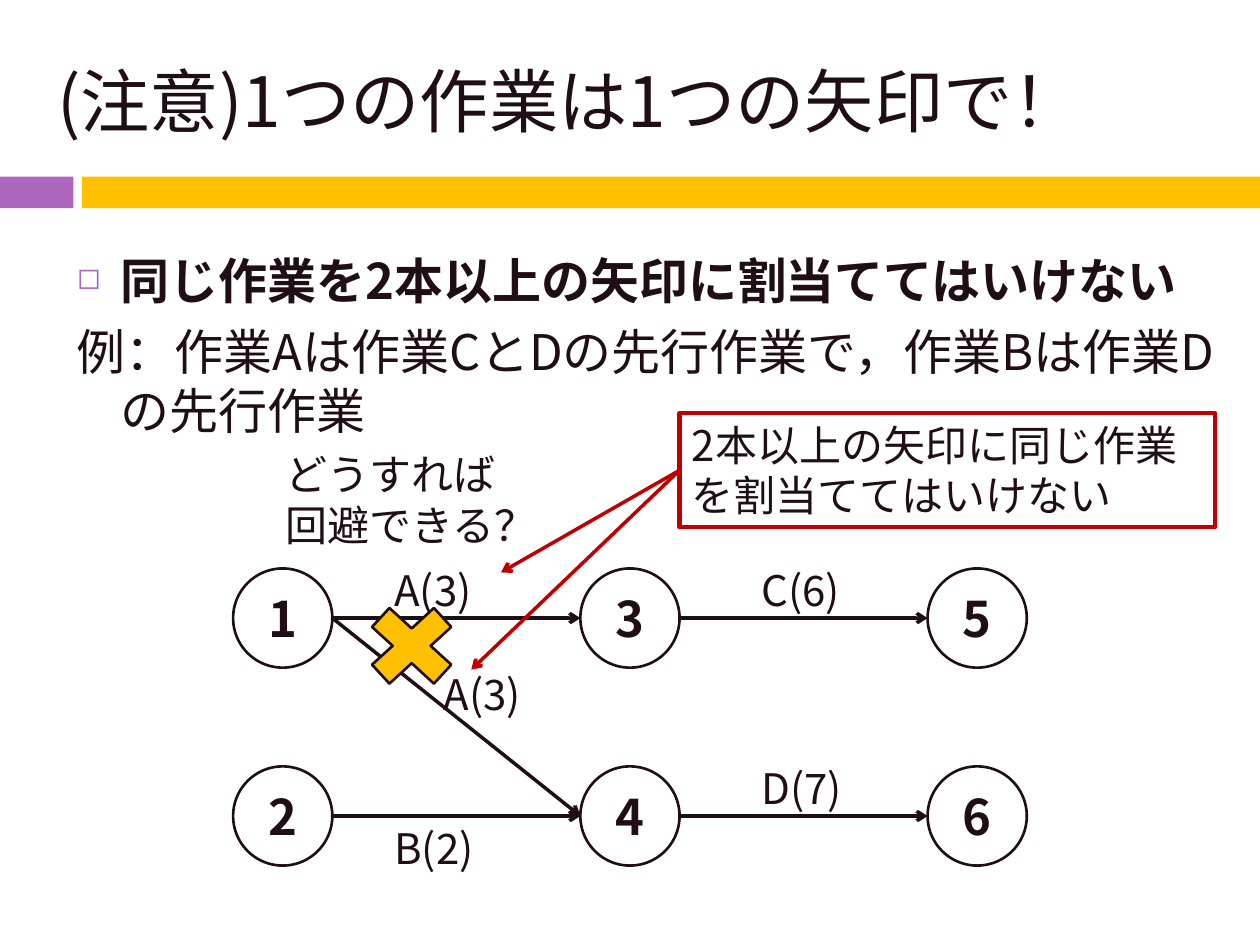
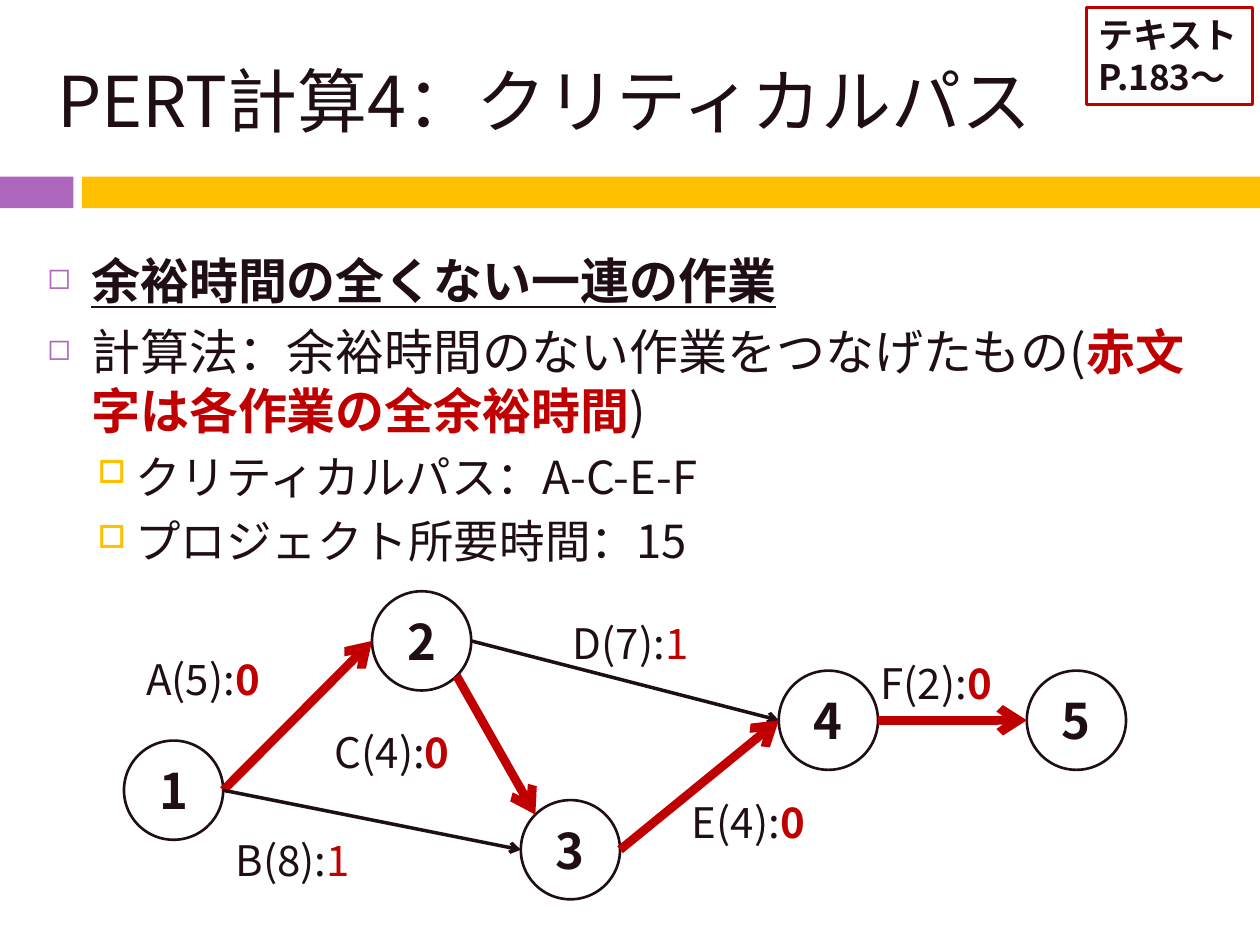
"""Build two slides on arrow diagrams and the critical path."""
from math import sqrt

from lxml import etree
from pptx import Presentation
from pptx.dml.color import RGBColor
from pptx.enum.shapes import MSO_CONNECTOR, MSO_SHAPE
from pptx.enum.text import MSO_ANCHOR, MSO_AUTO_SIZE, PP_ALIGN
from pptx.oxml.ns import qn
from pptx.util import Cm, Pt

STRAIGHT = MSO_CONNECTOR.STRAIGHT
RECT, OVAL, CROSS = MSO_SHAPE.RECTANGLE, MSO_SHAPE.OVAL, MSO_SHAPE.MATH_MULTIPLY
MIDDLE, TOP = MSO_ANCHOR.MIDDLE, MSO_ANCHOR.TOP
LEFT, CENTER = PP_ALIGN.LEFT, PP_ALIGN.CENTER
NO_FIT = MSO_AUTO_SIZE.NONE

COLORS = {"ink": "200E17", "purple": "AC66BB", "amber": "FFC000", "red": "C00000"}
FONT = "Noto Sans CJK JP"
WIDTH, HEIGHT = 25.4, 19.05
RADIUS = 1
BULLETS = {
    0: dict(char="◻", color="purple", percent=60, margin=0.89, hang=0.89, before=7, size=28),
    1: dict(char="□", color="amber", percent=70, margin=1.78, hang=0.76, before=5.5, size=26),
}


def rgb(name):
    return RGBColor.from_string(COLORS[name])


class Deck:
    """Hold the shared style and the current slide."""

    def __init__(self):
        self.prs = Presentation()
        self.prs.slide_width, self.prs.slide_height = Cm(WIDTH), Cm(HEIGHT)
        self.s = None

    def slide(self, title, size=40):
        self.s = self.prs.slides.add_slide(self.prs.slide_layouts[5])
        self.shape(RECT, 0, 3.56, 1.48, 0.64, "purple")
        self.shape(RECT, 1.65, 3.56, WIDTH - 1.65, 0.64, "amber")
        sp = self.s.shapes.title
        sp.left, sp.top, sp.width, sp.height = Cm(0.9), Cm(0.64), Cm(23.6), Cm(2.74)
        tf = sp.text_frame
        tf.auto_size, tf.vertical_anchor = NO_FIT, MIDDLE
        self.runs(tf.paragraphs[0], [(title, {})], size)

    def runs(self, p, parts, size, align=LEFT):
        p.alignment = align
        for text, look in parts:
            r = p.add_run()
            r.text = text
            r.font.name, r.font.size = FONT, Pt(size)
            r.font.bold = look.get("bold", False)
            r.font.underline = look.get("underline", False)
            r.font.color.rgb = rgb(look.get("color", "ink"))
            etree.SubElement(r.font._element, qn("a:ea"), typeface=FONT)

    def shape(self, kind, x, y, w, h, fill=None, line=None, weight=1.5):
        sp = self.s.shapes.add_shape(kind, Cm(x), Cm(y), Cm(w), Cm(h))
        sp.shadow.inherit = False
        if fill:
            sp.fill.solid()
            sp.fill.fore_color.rgb = rgb(fill)
        else:
            sp.fill.background()
        if line:
            sp.line.color.rgb, sp.line.width = rgb(line), Pt(weight)
        else:
            sp.line.fill.background()
        return sp

    def text(self, x, y, w, h, lines, size=24, border=None, wrap=True):
        sp = self.s.shapes.add_textbox(Cm(x), Cm(y), Cm(w), Cm(h))
        if border:
            sp.line.color.rgb, sp.line.width = rgb("red"), Pt(border)
        tf = sp.text_frame
        tf.word_wrap, tf.vertical_anchor = wrap, TOP
        for i, parts in enumerate(lines):
            p = tf.add_paragraph() if i else tf.paragraphs[0]
            self.runs(p, parts, size)

    def body(self, x, w, items):
        sp = self.s.shapes.add_textbox(Cm(x), Cm(4.93), Cm(w), Cm(12))
        tf = sp.text_frame
        tf.word_wrap = True
        for i, (level, bulleted, parts) in enumerate(items):
            p = tf.add_paragraph() if i else tf.paragraphs[0]
            style = BULLETS[level]
            p.level, p.space_before = level, Pt(style["before"])
            self.runs(p, parts, style["size"])
            pPr = p._p.get_or_add_pPr()
            pPr.set("marL", str(Cm(style["margin"])))
            pPr.set("indent", str(-Cm(style["hang"])))
            if bulleted:
                clr = etree.SubElement(pPr, qn("a:buClr"))
                etree.SubElement(clr, qn("a:srgbClr"), val=COLORS[style["color"]])
                etree.SubElement(pPr, qn("a:buSzPct"), val=str(style["percent"] * 1000))
                etree.SubElement(pPr, qn("a:buChar"), char=style["char"])

    def node(self, name, x, y):
        sp = self.shape(OVAL, x, y, 2 * RADIUS, 2 * RADIUS, line="ink")
        tf = sp.text_frame
        tf.vertical_anchor = MIDDLE
        self.runs(tf.paragraphs[0], [(name, {"bold": True})], 28, CENTER)

    def arrow(self, x1, y1, x2, y2, color="ink", weight=2):
        c = self.s.shapes.add_connector(STRAIGHT, Cm(x1), Cm(y1), Cm(x2), Cm(y2))
        c.line.color.rgb, c.line.width = rgb(color), Pt(weight)
        spPr = c.element.spPr
        etree.SubElement(spPr.find(qn("a:ln")), qn("a:tailEnd"), type="arrow")
        etree.SubElement(spPr, qn("a:effectLst"))

    def link(self, start, end, critical=False, diagonal=False):
        dx, dy = (RADIUS / sqrt(2),) * 2 if diagonal else (RADIUS, 0)
        (x1, y1), (x2, y2) = [(x + RADIUS, y + RADIUS) for x, y in (start, end)]
        color, weight = ("red", 5) if critical else ("ink", 2)
        self.arrow(x1 + dx, y1 + dy, x2 - dx, y2 - dy, color, weight)


def one_arrow_per_task(d):
    d.slide("(注意)1つの作業は1つの矢印で！", 39.6)
    d.body(1.3, 23.6, [
        (0, True, [("同じ作業を2本以上の矢印に割当ててはいけない", {"bold": True})]),
        (0, False, [("例：作業Aは作業CとDの先行作業で，作業Bは作業Dの先行作業", {})]),
    ])
    nodes = {str(2 * col + row + 1): (4.7 + 7 * col, 11.46 + 3.99 * row)
             for col in range(3) for row in range(2)}
    for name, at in nodes.items():
        d.node(name, *at)
    for start, end in ("13", "14", "24", "35", "46"):
        d.link(nodes[start], nodes[end])
    for text, x, y in (("A(3)", 7.7, 11.25), ("A(3)", 8.7, 13.35), ("B(2)", 7.7, 16.45),
                       ("C(6)", 15.1, 11.25), ("D(7)", 15.1, 15.25)):
        d.text(x, y, 2.6, 1.27, [[(text, {})]])
    d.text(13.7, 8.33, 10.8, 2.3, [[("2本以上の矢印に同じ作業を割当ててはいけない", {})]], border=2.5)
    for x, y in ((10.1, 11.54), (9.5, 13.5)):
        d.arrow(13.7, 9.48, x, y, "red")
    d.text(5.5, 8.92, 5.7, 2.3, [[("どうすれば　回避できる？", {})]])
    d.shape(CROSS, 7.1, 11.92, 2.4, 2.2, "amber", "ink")


def critical_path(d):
    d.slide("PERT計算4：クリティカルパス")
    d.body(0.7, 23.8, [
        (0, True, [("余裕時間の全くない一連の作業", {"bold": True, "underline": True})]),
        (0, True, [("計算法：余裕時間のない作業をつなげたもの(", {}),
                   ("赤文字は各作業の全余裕時間", {"bold": True, "color": "red"}),
                   (")", {})]),
        (1, True, [("クリティカルパス：A-C-E-F", {})]),
        (1, True, [("プロジェクト所要時間：15", {})]),
    ])
    nodes = {"1": (2.5, 14.93), "2": (7.5, 11.92), "3": (10.5, 16.13),
             "4": (15.7, 13.52), "5": (20.7, 13.52)}
    for name, at in nodes.items():
        d.node(name, *at)
    tasks = (("A(5):", 0, "12", 2.7, 13.05), ("B(8):", 1, "13", 4.5, 16.7),
             ("C(4):", 0, "23", 6.5, 14.53), ("D(7):", 1, "24", 11.3, 12.32),
             ("E(4):", 0, "34", 13.7, 15.93), ("F(2):", 0, "45", 17.5, 13.13))
    for text, slack, (start, end), x, y in tasks:
        d.link(nodes[start], nodes[end], slack == 0, diagonal=start + end == "23")
        d.text(x, y, 3.4, 1.27, [[(text, {}), (str(slack), {"color": "red", "bold": slack == 0})]])
    d.text(21.9, 0.15, 3.35, 1.95, [[(t, {"bold": True})] for t in ("テキスト", "P.183～")],
           size=20, border=1.75, wrap=False)


def main():
    d = Deck()
    one_arrow_per_task(d)
    critical_path(d)
    d.prs.save("out.pptx")


if __name__ == "__main__":
    main()
